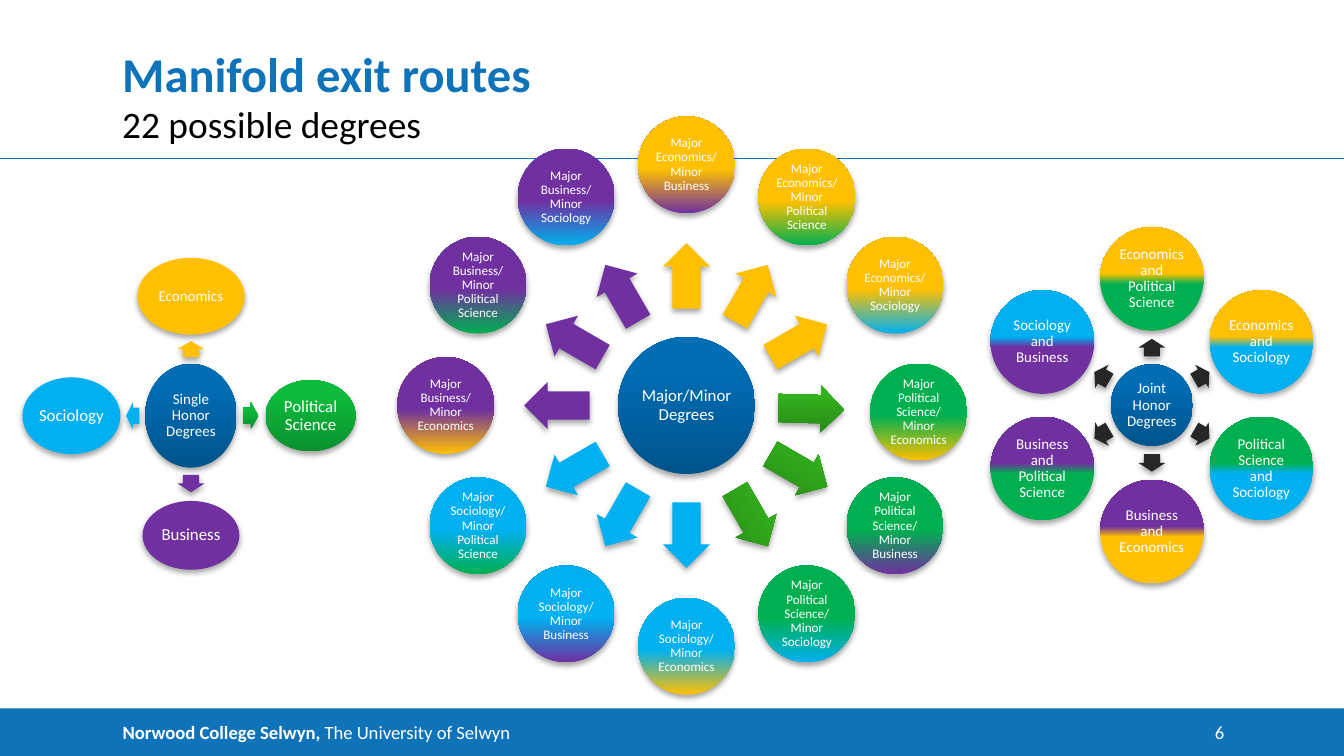
from dataclasses import dataclass
from math import cos, radians, sin
from typing import NamedTuple

from lxml import etree
from pptx import Presentation
from pptx import util as u
from pptx.dml.color import RGBColor
from pptx.enum import shapes, text
from pptx.oxml import ns

Cm = u.Cm


@dataclass(frozen=True)
class Theme:
    font: str = "Calibri"
    brand: str = "0E73B9"
    rule: str = "0070BB"
    white: str = "FFFFFF"
    black: str = "000000"
    charcoal: str = "262626"
    hub: tuple = ((0, "00548C"), (0.8, "006DB5"))
    green_arrow: tuple = ((0, "288917"), (0.8, "34B21E"))
    green_node: tuple = ((0, "0A902E"), (0.8, "0DBC3C"))
    title: int = 26
    subtitle: int = 20
    footer: int = 10
    label: int = 9
    small: int = 8
    tiny: int = 7


class Box(NamedTuple):
    left: float
    top: float
    width: float
    height: float

    def centre(self):
        return self.left + self.width / 2, self.top + self.height / 2


T = Theme()
SUBJECTS = {"Economics": "FFC000", "Political Science": "00B050",
            "Sociology": "00B0F0", "Business": "7030A0"}


def polar(centre, radius, angle):
    a = radians(angle)
    return centre[0] + radius * cos(a), centre[1] + radius * sin(a)


def paint(sp, fill):
    """Fill with one colour, or with bottom-to-top gradient stops."""
    if isinstance(fill, str):
        sp.fill.solid()
        sp.fill.fore_color.rgb = RGBColor.from_string(fill)
    else:
        sp.fill.gradient()
        sp.fill.gradient_angle = 90
        for stop, (position, colour) in zip(sp.fill.gradient_stops, fill):
            stop.position = position
            stop.color.rgb = RGBColor.from_string(colour)
    sp.line.fill.background()
    sp.shadow.inherit = False


def add_shadow(sp):
    effects = sp.element.spPr.find(ns.qn("a:effectLst"))
    outer = etree.SubElement(effects, ns.qn("a:outerShdw"), blurRad="39400",
                             dist="22900", dir="5400000", rotWithShape="0")
    colour = etree.SubElement(outer, ns.qn("a:srgbClr"), val=T.black)
    etree.SubElement(colour, ns.qn("a:alpha"), val="35000")


def style(p, size, colour, bold=False):
    for r in p.runs:
        r.font.name, r.font.size, r.font.bold = T.font, u.Pt(size), bold
        r.font.color.rgb = RGBColor.from_string(colour)


def set_margins(tf, margin):
    tf.margin_left = tf.margin_right = tf.margin_top = tf.margin_bottom = Cm(margin)
    tf.word_wrap = True


def add_centred(group, kind, centre, size, fill):
    (x, y), (w, h) = centre, size
    sp = group.shapes.add_shape(kind, Cm(x - w / 2), Cm(y - h / 2), Cm(w), Cm(h))
    paint(sp, fill)
    add_shadow(sp)
    return sp


def add_node(group, centre, size, fill, label, points):
    tf = add_centred(group, shapes.MSO_SHAPE.OVAL, centre, size, fill).text_frame
    set_margins(tf, 0.02)
    tf.vertical_anchor = text.MSO_ANCHOR.MIDDLE
    tf.text = label
    p = tf.paragraphs[0]
    p.alignment, p.line_spacing = text.PP_ALIGN.CENTER, 0.9
    style(p, points, T.white)


def add_arrow(group, centre, size, fill, angle):
    sp = add_centred(group, shapes.MSO_SHAPE.RIGHT_ARROW, centre, size, fill)
    sp.adjustments[0], sp.adjustments[1] = 0.6, 0.5
    sp.rotation = angle % 360


def add_text(s, box, content, size, colour, bold=False,
             anchor=text.MSO_ANCHOR.TOP, align=text.PP_ALIGN.LEFT):
    tf = s.shapes.add_textbox(*map(Cm, box)).text_frame
    set_margins(tf, 0)
    tf.vertical_anchor = anchor
    tf.text = content
    tf.paragraphs[0].alignment = align
    style(tf.paragraphs[0], size, colour, bold)


def heading(s, box):
    add_text(s, Box(box.left, box.top, box.width, 1.17), "Manifold exit routes",
             T.title, T.brand, True, text.MSO_ANCHOR.BOTTOM)
    add_text(s, Box(box.left, box.top + 1.15, box.width, 0.58),
             "22 possible degrees", T.subtitle, T.black)
    # Full-width rule
    y = Cm(box.top + 2.24)
    line = s.shapes.add_connector(shapes.MSO_CONNECTOR.STRAIGHT, 0, y, Cm(25.4), y)
    line.line.color.rgb = RGBColor.from_string(T.rule)
    line.line.width = u.Pt(0.75)
    etree.SubElement(line.element.spPr, ns.qn("a:effectLst"))


def footer(s, box):
    sp = s.shapes.add_shape(shapes.MSO_SHAPE.RECTANGLE, *map(Cm, box))
    paint(sp, T.brand)
    tf = sp.text_frame
    set_margins(tf, 0)
    tf.margin_left = Cm(2.32)
    tf.vertical_anchor = text.MSO_ANCHOR.MIDDLE
    p = tf.paragraphs[0]
    p.alignment = text.PP_ALIGN.LEFT
    for content in ("Norwood College Selwyn, ", "The University of Selwyn"):
        p.add_run().text = content
    style(p, T.footer, T.white)
    p.runs[0].font.bold = True
    # Page number
    add_text(s, Box(box.left + 22.1, box.top + 0.23, 1.04, 0.43), "6",
             T.footer, T.white, align=text.PP_ALIGN.RIGHT)


def single_honors(s, box):
    group, centre = s.shapes.add_group_shape(), box.centre()
    add_node(group, centre, (1.73, 1.96), T.hub, "Single Honor Degrees", T.small)
    # subject, angle, node size, arrow length, arrow distance, type size
    spokes = [("Economics", -90, (2.03, 1.45), 0.3, 1.26, T.small),
              ("Political Science", 0, (1.7, 1.35), 0.28, 1.13, T.label),
              ("Business", 90, (1.83, 1.3), 0.33, 1.28, T.label),
              ("Sociology", 180, (1.85, 1.45), 0.25, 1.1, T.label)]
    for subject, angle, size, length, distance, points in spokes:
        fill = T.green_node if subject == "Political Science" else SUBJECTS[subject]
        add_arrow(group, polar(centre, distance, angle), (length, 0.51), fill, angle)
        add_node(group, polar(centre, 2.26, angle), size, fill, subject, points)


def major_minor(s, box):
    group, centre, node = s.shapes.add_group_shape(), box.centre(), 1.83
    add_node(group, centre, (2.59, 2.59), T.hub, "Major/Minor Degrees", T.label)
    minors = {"Economics": ("Business", "Political Science", "Sociology"),
              "Political Science": ("Economics", "Business", "Sociology"),
              "Sociology": ("Economics", "Business", "Political Science"),
              "Business": ("Economics", "Political Science", "Sociology")}
    pairs = [(major, minor) for major in minors for minor in minors[major]]
    for i, (major, minor) in enumerate(pairs):
        angle, ring, distance = 30 * i - 90, (box.height - node) / 2, 2.45
        if angle == 0:  # the right-hand spoke sits slightly lower and closer
            angle, ring, distance = 1.6, 4.39, 2.36
        colour = SUBJECTS[major]
        arrow = T.green_arrow if major == "Political Science" else colour
        add_arrow(group, polar(centre, distance, angle), (1.24, 0.89), arrow, angle)
        add_node(group, polar(centre, ring, angle), (node, node),
                 ((0, SUBJECTS[minor]), (0.46, colour)),
                 f"Major {major}/\vMinor {minor}", T.tiny)


def joint_honors(s, box):
    group, centre, node = s.shapes.add_group_shape(), box.centre(), 1.96
    add_node(group, centre, (1.55, 1.55), T.hub, "Joint Honor Degrees", T.small)
    pairs = [("Economics", "Political Science"), ("Economics", "Sociology"),
             ("Political Science", "Sociology"), ("Business", "Economics"),
             ("Business", "Political Science"), ("Sociology", "Business")]
    for i, (upper, lower) in enumerate(pairs):
        angle = 60 * i - 90
        add_arrow(group, polar(centre, 1.09, angle), (0.33, 0.51), T.charcoal, angle)
        add_node(group, polar(centre, (box.height - node) / 2, angle), (node, node),
                 ((0.45, SUBJECTS[lower]), (0.55, SUBJECTS[upper])),
                 f"{upper} and {lower}", T.small)


def main():
    prs = Presentation()
    prs.slide_width, prs.slide_height = Cm(25.4), Cm(14.29)
    s = prs.slides.add_slide(prs.slide_layouts[6])
    footer(s, Box(0, 13.39, 25.4, 0.9))
    heading(s, Box(2.31, 0.76, 20.83, 1.73))
    major_minor(s, Box(7.51, 2.2, 10.93, 10.93))
    single_honors(s, Box(0.43, 4.88, 6.36, 5.96))
    joint_honors(s, Box(18.4, 4.29, 6.74, 6.74))
    prs.save("out.pptx")


if __name__ == "__main__":
    main()
